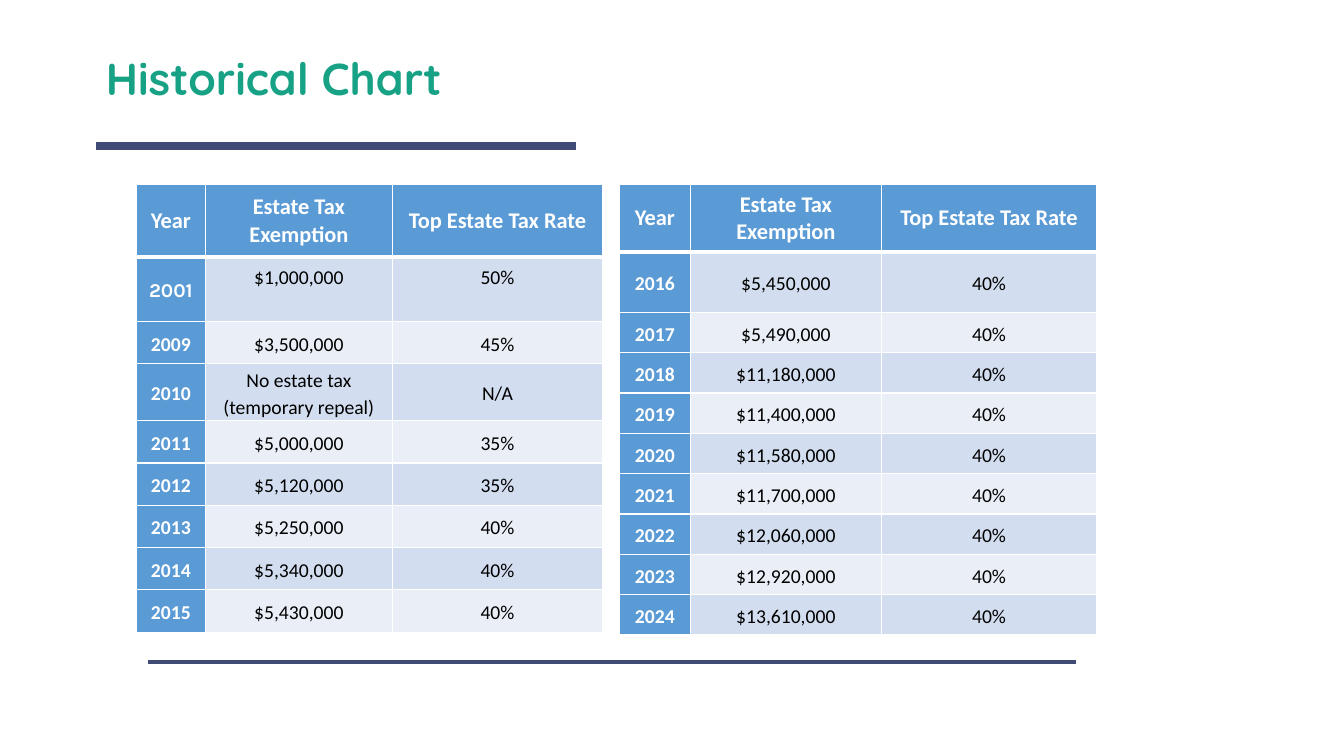
import pptx
import pptx.dml.color
import pptx.enum.shapes
import pptx.enum.text
import pptx.oxml
import pptx.oxml.ns
import pptx.util
from pptx.util import Inches

COLORS = {"title": "17A185", "rule": "3F4A75", "head": "5B9BD5", "band": "D2DEEF",
          "plain": "EAEFF7", "white": "FFFFFF", "text": "000000"}
HEADERS = ("Year", "Estate Tax Exemption", "Top Estate Tax Rate")
EARLY_YEARS = [
    ("2001", "$1,000,000", "50%"),
    ("2009", "$3,500,000", "45%"),
    ("2010", "No estate tax (temporary repeal)", "N/A"),
    ("2011", "$5,000,000", "35%"),
    ("2012", "$5,120,000", "35%"),
    ("2013", "$5,250,000", "40%"),
    ("2014", "$5,340,000", "40%"),
    ("2015", "$5,430,000", "40%"),
]
EXEMPTIONS_FROM_2016 = ("$5,450,000", "$5,490,000", "$11,180,000", "$11,400,000", "$11,580,000",
                        "$11,700,000", "$12,060,000", "$12,920,000", "$13,610,000")
LATE_YEARS = [(str(year), amount, "40%") for year, amount in enumerate(EXEMPTIONS_FROM_2016, 2016)]


class Deck:
    """Holds the slide and its style, and draws each kind of element."""

    def __init__(self, prs):
        self.s = prs.slides.add_slide(prs.slide_layouts[5])
        self.font = "Calibri"

    def color(self, name):
        return pptx.dml.color.RGBColor.from_string(COLORS[name])

    def run(self, p, text, size, color, bold, font=None):
        r = p.add_run()
        r.text = text
        r.font.name = font or self.font
        r.font.size = pptx.util.Pt(size)
        r.font.bold = bold
        r.font.color.rgb = self.color(color)

    def title(self, text, x, y, w, h):
        sp = self.s.shapes.title
        sp.left, sp.top, sp.width, sp.height = map(Inches, (x, y, w, h))
        tf = sp.text_frame
        tf.word_wrap = True
        tf.auto_size = pptx.enum.text.MSO_AUTO_SIZE.NONE
        tf.vertical_anchor = pptx.enum.text.MSO_ANCHOR.MIDDLE
        p = tf.paragraphs[0]
        p.alignment = pptx.enum.text.PP_ALIGN.LEFT
        p.line_spacing = 0.9
        self.run(p, text, 32, "title", True, "Quicksand")

    def rule(self, x1, x2, y, width):
        line = self.s.shapes.add_connector(pptx.enum.shapes.MSO_CONNECTOR.STRAIGHT,
                                           Inches(x1), Inches(y), Inches(x2), Inches(y))
        line.line.color.rgb = self.color("rule")
        line.line.width = pptx.util.Pt(width)
        pptx.oxml.ns.qn("a:effectLst")
        line._element.spPr.append(pptx.oxml.parse_xml(
            f'<a:effectLst {pptx.oxml.ns.nsdecls("a")}/>'))

    def borders(self, cell, top, bottom):
        tc_pr = cell._tc.get_or_add_tcPr()
        for side, width in (("L", 1), ("R", 1), ("T", top), ("B", bottom)):
            tc_pr.append(pptx.oxml.parse_xml(
                f'<a:ln{side} {pptx.oxml.ns.nsdecls("a")} w="{pptx.util.Pt(width)}">'
                f'<a:solidFill><a:srgbClr val="{COLORS["white"]}"/></a:solidFill></a:ln{side}>'))

    def cell(self, cell, text, row, col, font):
        header = row == 0
        self.borders(cell, 3 if row == 1 else 1, 3 if header else 1)
        label = header or col == 0
        cell.fill.solid()
        cell.fill.fore_color.rgb = self.color("head" if label else "band" if row % 2 else "plain")
        cell.vertical_anchor = pptx.enum.text.MSO_ANCHOR.MIDDLE
        cell.margin_left = cell.margin_right = Inches(0.05 if header else 0.01)
        cell.margin_top = cell.margin_bottom = Inches(0.03 if header else 0.01)
        p = cell.text_frame.paragraphs[0]
        p.alignment = pptx.enum.text.PP_ALIGN.CENTER
        if not header:
            p.line_spacing = 1.15
        self.run(p, text, 16 if header else 14, "white" if label else "text", label, font)

    def table(self, x, y, widths, heights, rows, first_year_font=None):
        rows = [HEADERS, *rows]
        heights = [*heights[:2], *[heights[2]] * (len(rows) - 2)]
        table = self.s.shapes.add_table(len(rows), len(widths), Inches(x), Inches(y),
                                        Inches(sum(widths)), Inches(sum(heights))).table
        table.horz_banding = False
        for column, width in zip(table.columns, widths):
            column.width = Inches(width)
        for i, (values, height) in enumerate(zip(rows, heights)):
            table.rows[i].height = Inches(height)
            for j, text in enumerate(values):
                font = first_year_font if (i, j) == (1, 0) else None
                self.cell(table.cell(i, j), text, i, j, font)
        return table


def main():
    prs = pptx.Presentation()
    prs.slide_width, prs.slide_height = Inches(13.33), Inches(7.5)
    deck = Deck(prs)
    deck.rule(0.95, 5.71, 1.45, 6)
    deck.rule(1.47, 10.67, 6.57, 3)
    deck.title("Historical Chart", 0.95, 0.4, 11.47, 0.8)
    early = deck.table(1.35, 1.83, (0.69, 1.85, 2.09), (0.72, 0.64, 0.42), EARLY_YEARS, "Karla")
    for col in (1, 2):
        early.cell(1, col).margin_bottom = Inches(0.27)
    deck.table(6.14, 1.83, (0.71, 1.89, 2.14), (0.67, 0.6, 0.4), LATE_YEARS)
    prs.save("out.pptx")


if __name__ == "__main__":
    main()
